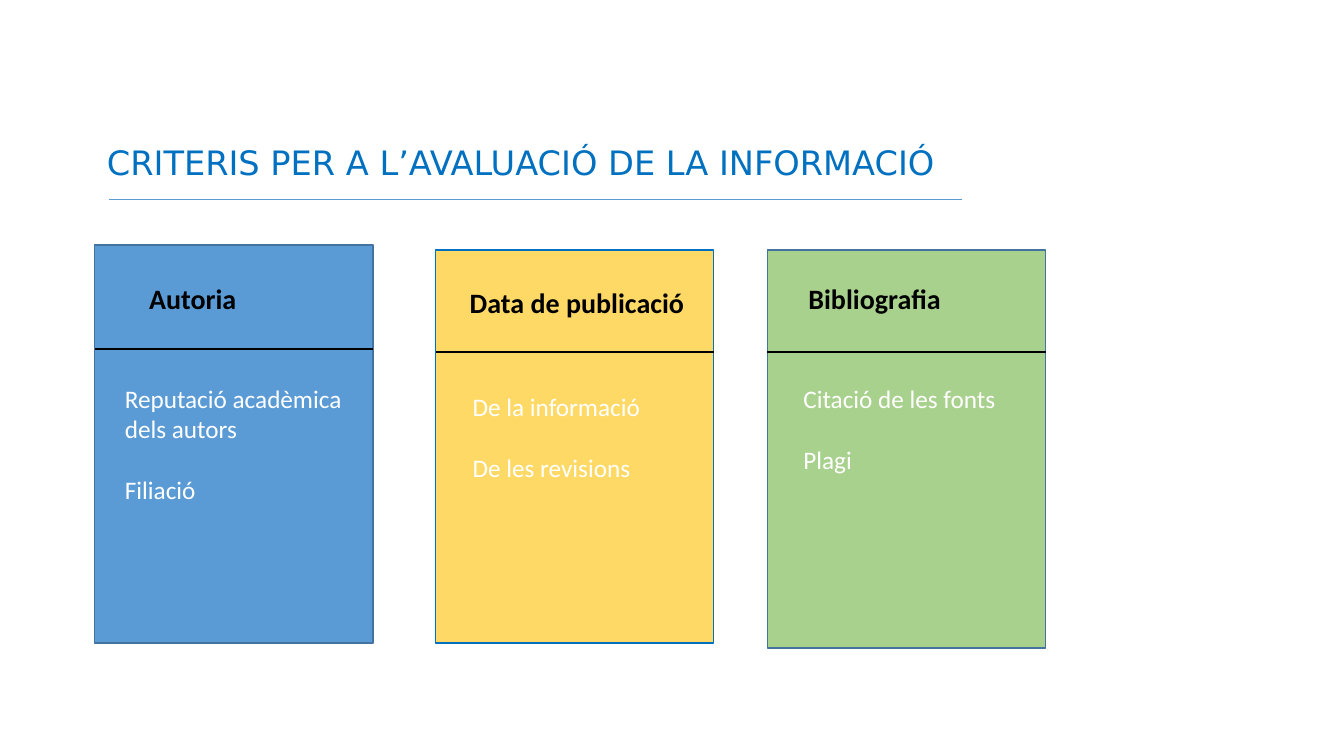
from pptx import Presentation, util as u
from pptx.dml.color import RGBColor
from pptx.enum import shapes, text
from lxml import etree

# Content
TITLE = "CRITERIS PER A L’AVALUACIÓ DE LA INFORMACIÓ"
HEX = {"title": "0070C0", "rule": "5B9BD5", "edge": "43739E", "blue": "5B9BD5",
       "gold": "FFD966", "green": "A9D18E", "dark": "000000", "light": "FFFFFF"}
WIDE = 2.76  # card width in inches
# Card: left, top, height, rule top; head and body: left, top, width
CARDS = [
    {"fill": "blue", "edge": "edge", "box": (0.94, 2.43, 3.95), "rule": 3.46,
     "head": ("Autoria", 1.38, 2.74, 2.11),
     "body": (["Reputació acadèmica dels autors", "Filiació"], 1.14, 3.75, 2.46)},
    {"fill": "gold", "edge": "title", "box": (4.32, 2.48, 3.9), "rule": 3.49,
     "head": ("Data de publicació", 4.56, 2.78, 2.42),
     "body": (["De la informació", "De les revisions"], 4.59, 3.83, 2.23)},
    {"fill": "green", "edge": "edge", "box": (7.61, 2.48, 3.95), "rule": 3.49,
     "head": ("Bibliografia", 7.92, 2.74, 2.24),
     "body": (["Citació de les fonts", "Plagi"], 7.87, 3.75, 2.24)},
]

deck = Presentation()
deck.slide_width, deck.slide_height = u.Inches(13.33), u.Inches(7.5)
slide = deck.slides.add_slide(deck.slide_layouts[5])


def tint(name):
    return RGBColor.from_string(HEX[name])


def write(shape, lines, size, color, font="Calibri", bold=False, gap=0):
    frame = shape.text_frame
    frame.word_wrap = True
    frame.auto_size = text.MSO_AUTO_SIZE.NONE
    frame.vertical_anchor = text.MSO_ANCHOR.TOP
    for i, line in enumerate(lines):
        para = frame.add_paragraph() if i else frame.paragraphs[0]
        para.alignment = text.PP_ALIGN.LEFT
        para.space_before = u.Pt(gap if i else 0)
        run = para.add_run()
        run.text = line
        run.font.size, run.font.name, run.font.bold = u.Pt(size), font, bold
        run.font.color.rgb = tint(color)


def label(lines, left, top, wide, high, **form):
    box = slide.shapes.add_textbox(*map(u.Inches, (left, top, wide, high)))
    write(box, lines, **form)


def rule(left, top, wide, color, width):
    line = slide.shapes.add_connector(
        shapes.MSO_CONNECTOR.STRAIGHT, *map(u.Inches, (left, top, left + wide, top)))
    line.line.color.rgb, line.line.width = tint(color), u.Pt(width)
    props = line._element.spPr
    etree.SubElement(props, props.tag.replace("spPr", "effectLst").replace(
        "presentationml", "drawingml"))
    props[-1].getparent().replace(props[-1], etree.Element(
        "{http://schemas.openxmlformats.org/drawingml/2006/main}effectLst"))


# Title and its underline
title = slide.shapes.title
title.left, title.top, title.width, title.height = map(u.Inches, (0.96, 1.36, 10.02, 0.5))
write(title, [TITLE], size=24, color="title", font="DejaVu Sans")
rule(1.08, 1.98, 8.46, "rule", 0.5)

# Cards
for card in CARDS:
    left, top, high = card["box"]
    box = slide.shapes.add_shape(
        shapes.MSO_SHAPE.RECTANGLE, *map(u.Inches, (left, top, WIDE, high)))
    box.shadow.inherit = False
    box.fill.solid()
    box.fill.fore_color.rgb = tint(card["fill"])
    box.line.color.rgb, box.line.width = tint(card["edge"]), u.Pt(1)
    rule(left, card["rule"], WIDE, "dark", 1.5)
    head, *spot = card["head"]
    label([head], *spot, 0.44, size=20, color="dark", bold=True)
    body, *spot = card["body"]
    label(body, *spot, 1.31, size=18, color="light", gap=22)

deck.save("out.pptx")
